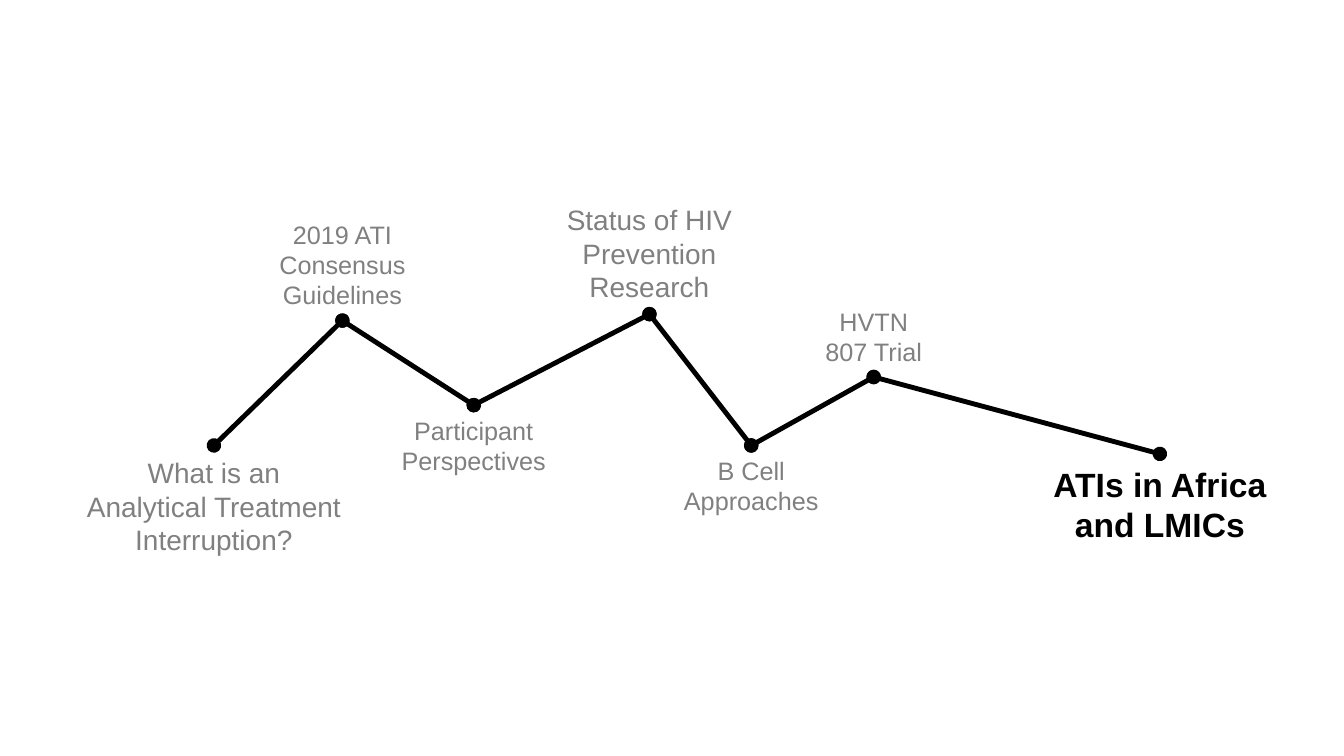
from itertools import pairwise

from lxml import etree
from pptx import Presentation
from pptx.dml.color import RGBColor
from pptx.enum.shapes import MSO_CONNECTOR
from pptx.enum.text import MSO_AUTO_SIZE, PP_ALIGN
from pptx.oxml.ns import qn
from pptx.util import Pt

STRAIGHT = MSO_CONNECTOR.STRAIGHT
CENTER = PP_ALIGN.CENTER
GROW = MSO_AUTO_SIZE.SHAPE_TO_FIT_TEXT

COLORS = {"past": "808080", "current": "000000", "path": "000000"}
INSET = 7.2
LINE_HEIGHT = 1.21

# Topic, x, y, label width, label line count, label above the point, size
stops = [
    ("What is an Analytical Treatment Interruption?", 152.8, 318.2, 196.6, 3, False, 20),
    ("2019 ATI Consensus Guidelines", 244.6, 229, 113, 3, True, 18),
    ("Participant Perspectives", 338.4, 289.4, 125.3, 2, False, 18),
    ("Status of HIV Prevention Research", 463.9, 224.4, 172, 3, True, 20),
    ("B Cell Approaches", 536.6, 318.2, 113, 2, False, 18),
    ("HVTN 807 Trial", 624.1, 269.3, 87.2, 2, True, 18),
    ("ATIs in Africa and LMICs", 828.5, 324.2, 172, 2, False, 24),
]

presentation = Presentation()
presentation.slide_width = Pt(960)
presentation.slide_height = Pt(540)
slide = presentation.slides.add_slide(presentation.slide_layouts[6])


def add_label(text, *, left, top, width, height, size, color, bold=False):
    label = slide.shapes.add_textbox(Pt(left), Pt(top), Pt(width), Pt(height))
    frame = label.text_frame
    frame.word_wrap = True
    frame.auto_size = GROW
    frame.margin_left = frame.margin_right = Pt(INSET)
    frame.margin_top = frame.margin_bottom = Pt(INSET)
    paragraph = frame.paragraphs[0]
    paragraph.alignment = CENTER
    run = paragraph.add_run()
    run.text = text
    run.font.name = "Arial"
    run.font.size = Pt(size)
    run.font.bold = bold
    run.font.color.rgb = RGBColor.from_string(color)


# Path from topic to topic, with a round dot at each end
for (_, x1, y1, *_), (_, x2, y2, *_) in pairwise(stops):
    segment = slide.shapes.add_connector(STRAIGHT, Pt(x1), Pt(y1), Pt(x2), Pt(y2))
    segment.line.width = Pt(3.5)
    segment.line.color.rgb = RGBColor.from_string(COLORS["path"])
    outline = segment.line._get_or_add_ln()
    for end in ("a:headEnd", "a:tailEnd"):
        etree.SubElement(outline, qn(end), type="oval")
    etree.SubElement(segment._element.spPr, qn("a:effectLst"))

# Topic labels, centred on their points; the last topic is the current one
for topic, x, y, width, line_count, above, size in stops:
    height = line_count * size * LINE_HEIGHT + 2 * INSET
    current = topic == stops[-1][0]
    add_label(
        topic,
        left=x - width / 2,
        top=y - height if above else y,
        width=width,
        height=height,
        size=size,
        color=COLORS["current" if current else "past"],
        bold=current,
    )

presentation.save("out.pptx")
